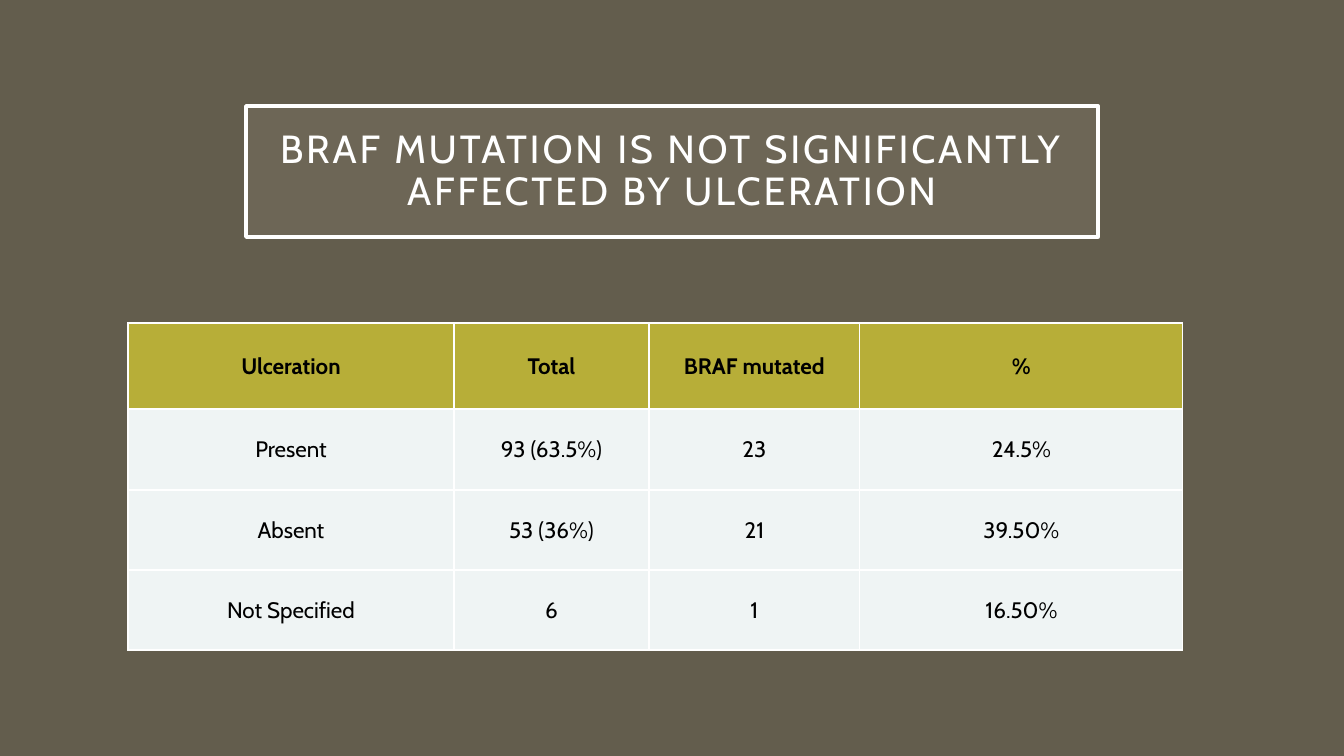
from dataclasses import dataclass

from lxml.etree import SubElement
from pptx import Presentation
from pptx.dml.color import RGBColor
from pptx.enum.text import MSO_ANCHOR, MSO_AUTO_SIZE, PP_ALIGN
from pptx.oxml.ns import qn
from pptx.util import Emu, Pt

FONT = "Cabin"
WHITE, BLACK = "FFFFFF", "000000"
BACKGROUND, TITLE_FILL = "635D4D", "A7A08E"
HEADER_FILL, BODY_FILL = "B7AE38", "EFF4F4"


@dataclass(frozen=True)
class Row:
    height: int
    values: tuple[str, ...]
    fill: str = BODY_FILL
    bold: bool = False


COLUMN_WIDTHS = (326, 195, 211, 323)
ROWS = (
    Row(86, ("Ulceration", "Total", "BRAF mutated", "%"), HEADER_FILL, True),
    Row(81, ("Present", "93 (63.5%)", "23", "24.5%")),
    Row(80, ("Absent", "53 (36%)", "21", "39.50%")),
    Row(80, ("Not Specified", "6", "1", "16.50%")),
)


def px(n: int) -> Emu:
    return Emu(round(n * 12192000 / 1344))


def rgb(color: str) -> RGBColor:
    return RGBColor.from_string(color)


def write(tf, text: str, *, size: int, color: str, bold: bool = False,
          line_spacing: float = 1.0, tracking: int = 0) -> None:
    p = tf.paragraphs[0]
    p.alignment = PP_ALIGN.CENTER
    p.line_spacing = line_spacing
    r = p.add_run()
    r.text = text
    r.font.name = FONT
    r.font.size = Pt(size)
    r.font.bold = bold
    r.font.color.rgb = rgb(color)
    if tracking:
        r.font._element.set("spc", str(tracking * 100))


def set_margins(box, left: int, top: int, right: int, bottom: int) -> None:
    box.margin_left, box.margin_top = px(left), px(top)
    box.margin_right, box.margin_bottom = px(right), px(bottom)


def add_borders(cell, color: str, width: int) -> None:
    tcPr = cell._tc.get_or_add_tcPr()
    for side in ("lnL", "lnR", "lnT", "lnB"):
        ln = SubElement(tcPr, qn(f"a:{side}"), w=str(Pt(width)))
        fill = SubElement(ln, qn("a:solidFill"))
        SubElement(fill, qn("a:srgbClr"), val=color)


def add_title(s, text: str) -> None:
    sp = s.shapes.title
    sp.left, sp.top, sp.width, sp.height = px(246), px(106), px(852), px(131)
    sp.fill.solid()
    sp.fill.fore_color.rgb = rgb(TITLE_FILL)
    fill_color = sp._element.spPr.find(qn("a:solidFill"))[0]
    SubElement(fill_color, qn("a:alpha"), val="15000")
    sp.line.color.rgb = rgb(WHITE)
    sp.line.width = Pt(2.5)
    tf = sp.text_frame
    tf.word_wrap = True
    tf.auto_size = MSO_AUTO_SIZE.NONE
    tf.vertical_anchor = MSO_ANCHOR.MIDDLE
    set_margins(tf, 20, 20, 20, 20)
    write(tf, text, size=28, color=WHITE, line_spacing=0.9, tracking=2)


def add_ulceration_table(s) -> None:
    frame = s.shapes.add_table(
        len(ROWS), len(COLUMN_WIDTHS), px(128), px(323),
        px(sum(COLUMN_WIDTHS)), px(sum(row.height for row in ROWS)))
    table = frame.table
    for column, width in zip(table.columns, COLUMN_WIDTHS):
        column.width = px(width)
    for i, row in enumerate(ROWS):
        table.rows[i].height = px(row.height)
        for j, value in enumerate(row.values):
            cell = table.cell(i, j)
            cell.vertical_anchor = MSO_ANCHOR.MIDDLE
            set_margins(cell, 1, 1, 1, 0)
            add_borders(cell, WHITE, 1)
            cell.fill.solid()
            cell.fill.fore_color.rgb = rgb(row.fill)
            write(cell.text_frame, value, size=16, color=BLACK, bold=row.bold)


def main() -> None:
    prs = Presentation()
    prs.slide_width, prs.slide_height = px(1344), px(756)
    s = prs.slides.add_slide(prs.slide_layouts[5])

    # Background
    s.background.fill.solid()
    s.background.fill.fore_color.rgb = rgb(BACKGROUND)

    # Framed title
    add_title(s, "BRAF MUTATION IS NOT SIGNIFICANTLY AFFECTED BY ULCERATION")

    # Mutation counts by ulceration
    add_ulceration_table(s)

    prs.save("out.pptx")


if __name__ == "__main__":
    main()
